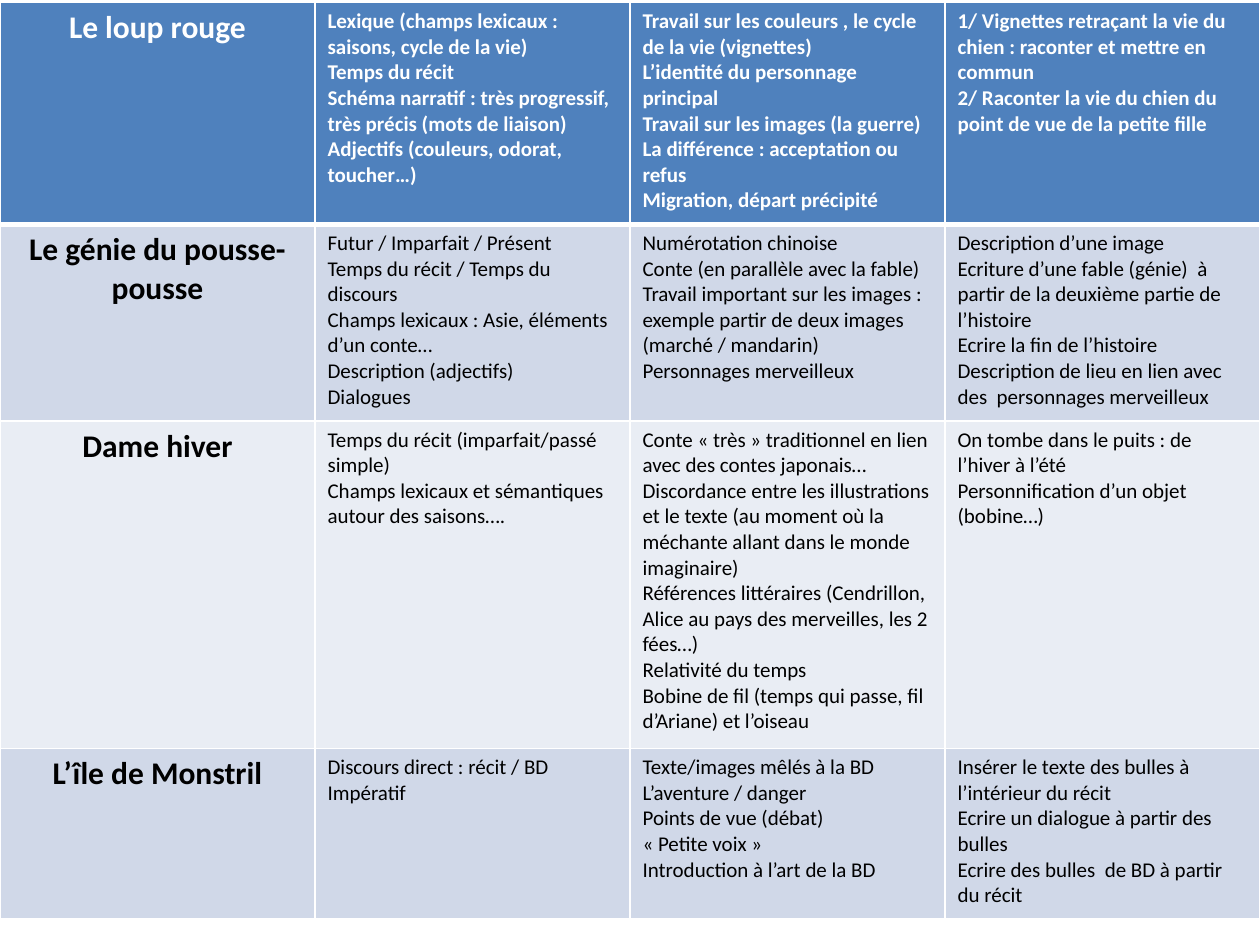
import dataclasses

import pptx
import pptx.dml.color
import pptx.enum.text
import pptx.oxml
import pptx.oxml.ns
import pptx.util

Inches = pptx.util.Inches
Pt = pptx.util.Pt
RGB = pptx.dml.color.RGBColor.from_string


@dataclasses.dataclass(frozen=True)
class Theme:
    font: str = "Calibri"
    title: int = 18
    body: int = 12
    head: str = "4F81BD"
    bands: tuple = ("E9EDF4", "D0D8E8")
    light: str = "FFFFFF"
    dark: str = "000000"
    rule: int = 1
    thick: int = 3


THEME = Theme()
WIDTH = 10
TOP = 0.02
HEIGHTS = (1.76, 1.56, 2.6, 1.35)

# Each row: book title, then language, reading and writing work.
BOOKS = [
    (
        ["Le loup rouge"],
        [
            "Lexique (champs lexicaux : saisons, cycle de la vie)",
            "Temps du récit",
            "Schéma narratif : très progressif, très précis (mots de liaison)",
            "Adjectifs (couleurs, odorat, toucher…)",
        ],
        [
            "Travail sur les couleurs , le cycle de la vie (vignettes)",
            "L’identité du personnage principal",
            "Travail sur les images (la guerre)",
            "La différence : acceptation ou refus",
            "Migration, départ précipité",
        ],
        [
            "1/ Vignettes retraçant la vie du chien : raconter et mettre en commun",
            "2/ Raconter la vie du chien du point de vue de la petite fille",
        ],
    ),
    (
        ["Le génie du pousse-pousse"],
        [
            "Futur / Imparfait / Présent",
            "Temps du récit / Temps du discours",
            "Champs lexicaux : Asie, éléments d’un conte…",
            "Description (adjectifs)",
            "Dialogues",
        ],
        [
            "Numérotation chinoise",
            "Conte (en parallèle avec la fable)",
            "Travail important sur les images : exemple partir de deux images  (marché / mandarin)",
            "Personnages merveilleux",
        ],
        [
            "Description d’une image",
            "Ecriture d’une fable (génie)  à partir de la deuxième partie de l’histoire",
            "Ecrire la fin de l’histoire",
            "Description de lieu en lien avec des  personnages merveilleux",
        ],
    ),
    (
        ["Dame hiver"],
        [
            "Temps du récit (imparfait/passé simple)",
            "Champs lexicaux et sémantiques autour des saisons….",
        ],
        [
            "Conte « très » traditionnel en lien avec des contes japonais…",
            "Discordance entre les illustrations et le texte (au moment où la méchante allant dans le monde imaginaire)",
            "Références littéraires (Cendrillon, Alice au pays des merveilles, les 2 fées…)",
            "Relativité du temps",
            "Bobine de fil (temps qui passe, fil d’Ariane) et l’oiseau",
        ],
        [
            "On tombe dans le puits : de l’hiver à l’été",
            "Personnification d’un objet (bobine…)",
        ],
    ),
    (
        ["L’île de Monstril"],
        ["Discours direct : récit / BD", "Impératif"],
        [
            "Texte/images mêlés à la BD",
            "L’aventure / danger",
            "Points de vue (débat)",
            "« Petite voix »",
            "Introduction à l’art de la BD",
        ],
        [
            "Insérer le texte des bulles à l’intérieur du récit",
            "Ecrire un dialogue à partir des bulles",
            "Ecrire des bulles  de BD à partir du récit",
        ],
    ),
]


def add_rules(cell, row):
    """Border the cell, with a thick rule under the first row."""
    thick = {0: "B", 1: "T"}.get(row)
    props = cell._tc.get_or_add_tcPr()
    for side in "LRTB":
        size = Pt(THEME.thick if side == thick else THEME.rule)
        props.append(pptx.oxml.parse_xml(
            f'<a:ln{side} {pptx.oxml.ns.nsdecls("a")} w="{size}"><a:solidFill>'
            f'<a:srgbClr val="{THEME.light}"/></a:solidFill></a:ln{side}>'))


def fill_cell(cell, lines, row, col):
    add_rules(cell, row)
    cell.fill.solid()
    cell.fill.fore_color.rgb = RGB(THEME.bands[row % 2] if row else THEME.head)
    cell.text_frame.text = "\n".join(lines)
    title = col == 0
    look = {
        "name": THEME.font,
        "size": Pt(THEME.title if title else THEME.body),
        "bold": title or row == 0,
    }
    align = pptx.enum.text.PP_ALIGN
    for para in cell.text_frame.paragraphs:
        para.alignment = align.CENTER if title else align.LEFT
        for run in para.runs:
            for key, value in look.items():
                setattr(run.font, key, value)
            run.font.color.rgb = RGB(THEME.dark if row else THEME.light)


def add_grid(slide, books):
    count = len(books[0])
    table = slide.shapes.add_table(
        len(books), count, Inches(0), Inches(TOP),
        Inches(WIDTH), Inches(sum(HEIGHTS))).table
    for col in table.columns:
        col.width = Inches(WIDTH / count)
    for row, (book, height) in enumerate(zip(books, HEIGHTS)):
        table.rows[row].height = Inches(height)
        for col, lines in enumerate(book):
            fill_cell(table.cell(row, col), lines, row, col)


def main():
    deck = pptx.Presentation()
    deck.slide_width, deck.slide_height = Inches(WIDTH), Inches(7.5)
    slide = deck.slides.add_slide(deck.slide_layouts[6])
    add_grid(slide, BOOKS)
    deck.save("out.pptx")


if __name__ == "__main__":
    main()
